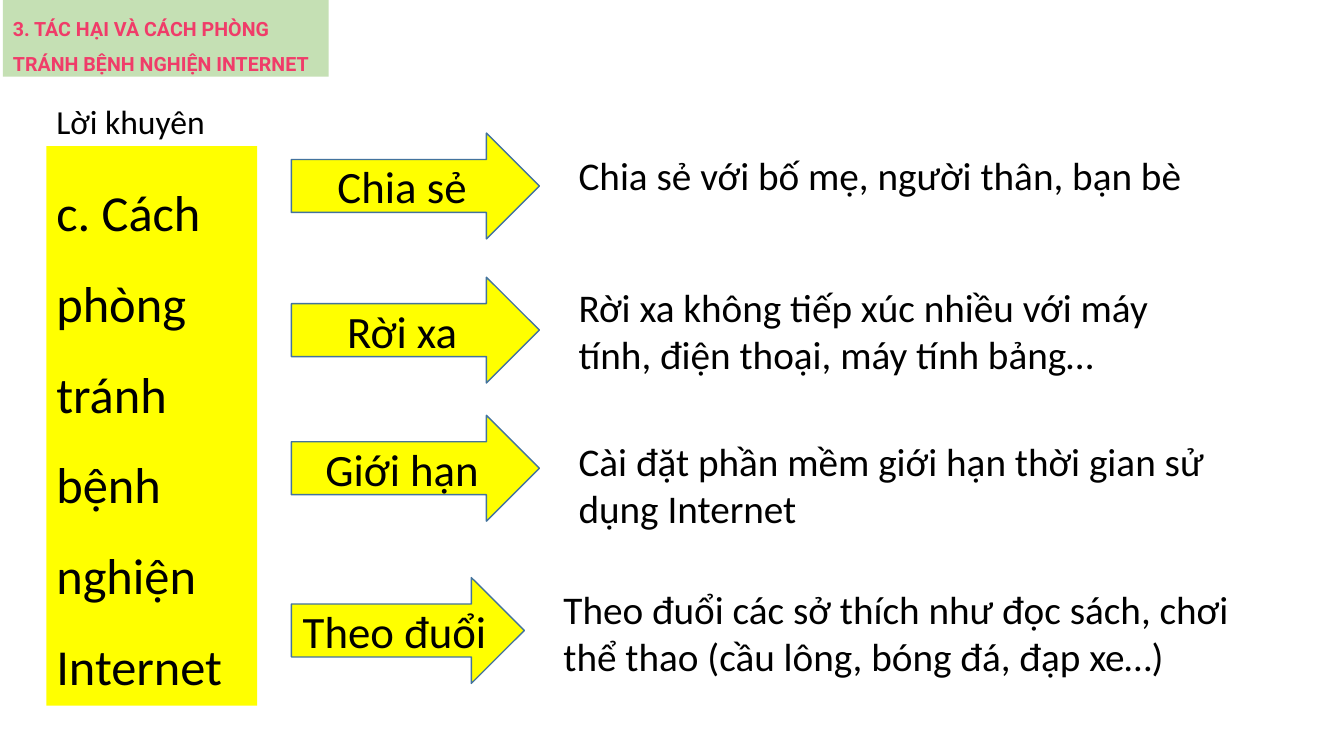
from pptx import Presentation
from pptx.dml.color import RGBColor
from pptx.enum.shapes import MSO_SHAPE
from pptx.enum.text import MSO_ANCHOR, PP_ALIGN
from pptx.util import Inches, Pt

# Content: label, advice, arrow top, arrow width, advice top, advice width, advice height
ADVICE = [
    ("Chia sẻ", "Chia sẻ với bố mẹ, người thân, bạn bè", 1.32, 2.46, 1.45, 6.48, 0.57),
    ("Rời xa", "Rời xa không tiếp xúc nhiều với máy tính, điện thoại, máy tính bảng…",
     2.75, 2.46, 2.76, 6.48, 1.04),
    ("Giới hạn", "Cài đặt phần mềm giới hạn thời gian sử dụng Internet",
     4.12, 2.46, 4.29, 6.48, 1.04),
    ("Theo đuổi", "Theo đuổi các sở thích như đọc sách, chơi thể thao (cầu lông, bóng đá, đạp xe…)",
     5.73, 2.31, 5.76, 6.82, 1.04),
]
TOPIC = "c. Cách phòng tránh bệnh nghiện Internet"
SUBTITLE = "Lời khuyên"
HEADING = "3. TÁC HẠI VÀ CÁCH PHÒNG TRÁNH BỆNH NGHIỆN INTERNET"

# Layout and formats
ARROW_LEFT, ARROW_HEIGHT, ARROW_GAP = 2.89, 1.05, 0.29
YELLOW, GREEN, BLUE = "FFFF00", "C5E0B4", "43739E"
TOPIC_FONT = {"name": "Calibri", "size": Pt(36)}
LABEL_FONT = {"name": "Calibri", "size": Pt(32)}
ADVICE_FONT = {"name": "Calibri", "size": Pt(28)}
SUBTITLE_FONT = {"name": "Calibri", "size": Pt(24)}
HEADING_FONT = {"name": "Roboto", "size": Pt(14), "bold": True}


def color(hex_value):
    return RGBColor.from_string(hex_value)


def write_text(shape, text, font, font_color="000000", anchor=MSO_ANCHOR.TOP, **paragraph_format):
    frame = shape.text_frame
    frame.word_wrap = True
    frame.vertical_anchor = anchor
    paragraph = frame.paragraphs[0]
    for name, value in {"alignment": PP_ALIGN.LEFT, **paragraph_format}.items():
        setattr(paragraph, name, value)
    run = paragraph.add_run()
    run.text = text
    for name, value in font.items():
        setattr(run.font, name, value)
    run.font.color.rgb = color(font_color)


def add_block(slide, kind, box, fill, line=None):
    shape = slide.shapes.add_shape(kind, *map(Inches, box))
    shape.shadow.inherit = False
    shape.fill.solid()
    shape.fill.fore_color.rgb = color(fill)
    if line:
        shape.line.color.rgb = color(line)
        shape.line.width = Pt(1)
    else:
        shape.line.fill.background()
    return shape


def add_label(slide, box, text, font):
    write_text(slide.shapes.add_textbox(*map(Inches, box)), text, font)


def main():
    presentation = Presentation()
    presentation.slide_width = Inches(13.33)
    presentation.slide_height = Inches(7.5)
    slide = presentation.slides.add_slide(presentation.slide_layouts[6])

    # Topic panel
    topic = add_block(slide, MSO_SHAPE.RECTANGLE, (0.46, 1.45, 2.09, 5.55), YELLOW)
    write_text(topic, TOPIC, TOPIC_FONT, line_spacing=1.5)

    # Arrows with their advice
    for label, advice, arrow_top, arrow_width, top, width, height in ADVICE:
        advice_left = ARROW_LEFT + arrow_width + ARROW_GAP
        add_label(slide, (advice_left, top, width, height), advice, ADVICE_FONT)
        arrow = add_block(slide, MSO_SHAPE.RIGHT_ARROW,
                          (ARROW_LEFT, arrow_top, arrow_width, ARROW_HEIGHT), YELLOW, BLUE)
        write_text(arrow, label, LABEL_FONT, anchor=MSO_ANCHOR.MIDDLE, alignment=PP_ALIGN.CENTER)

    # Subtitle and heading
    add_label(slide, (0.46, 0.95, 1.72, 0.5), SUBTITLE, SUBTITLE_FONT)
    heading = add_block(slide, MSO_SHAPE.RECTANGLE, (0.03, 0, 3.23, 0.76), GREEN)
    write_text(heading, HEADING, HEADING_FONT, "F03C69", line_spacing=1.5)

    presentation.save("out.pptx")


if __name__ == "__main__":
    main()
